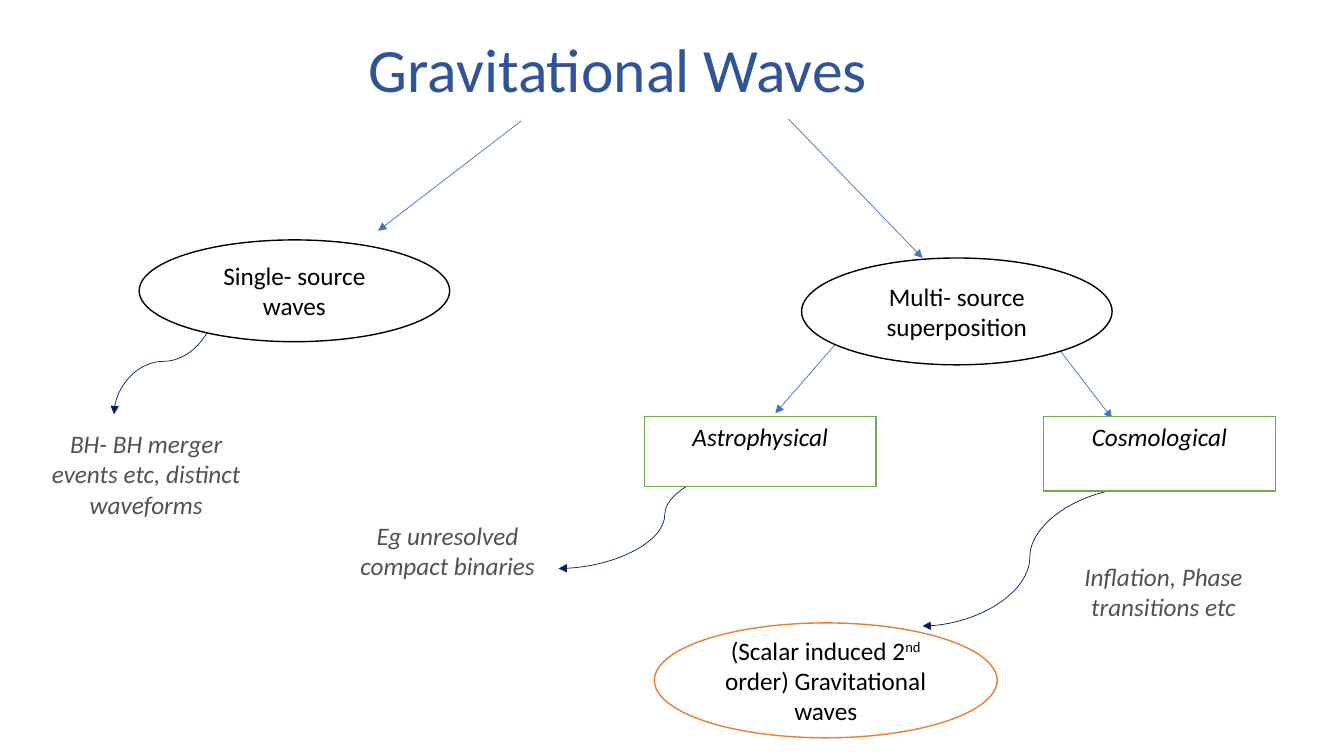
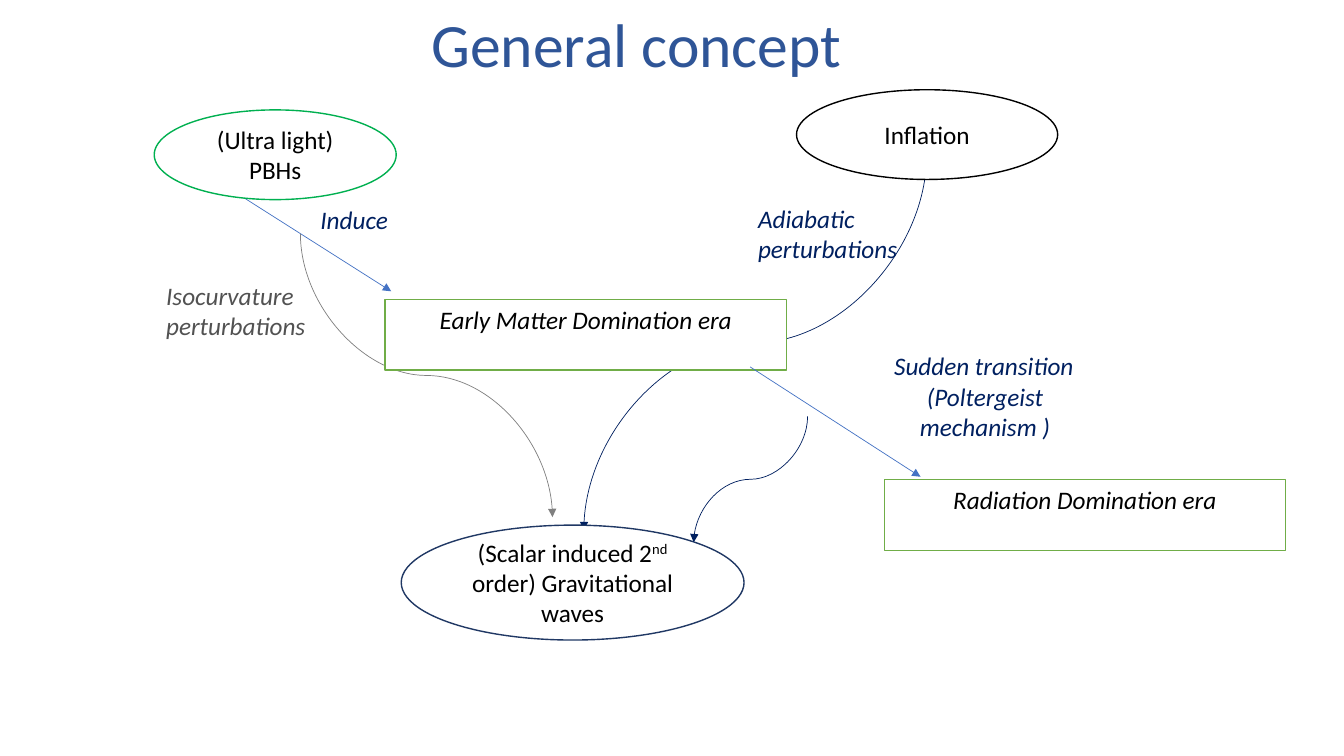
from dataclasses import dataclass

from lxml import etree
from pptx import Presentation
from pptx.dml.color import RGBColor
from pptx.enum.shapes import MSO_CONNECTOR, MSO_SHAPE
from pptx.enum.text import MSO_ANCHOR, MSO_AUTO_SIZE, PP_ALIGN
from pptx.oxml.ns import qn
from pptx.util import Pt

EMU_PER_PX = 9144  # 100 px to the inch
SLIDE_SIZE = (1333, 750)
TITLE_ONLY = 5
OVAL, RECT = MSO_SHAPE.OVAL, MSO_SHAPE.RECTANGLE
STRAIGHT, CURVE = MSO_CONNECTOR.STRAIGHT, MSO_CONNECTOR.CURVE
LEFT, CENTER = PP_ALIGN.LEFT, PP_ALIGN.CENTER
TOP, MIDDLE = MSO_ANCHOR.TOP, MSO_ANCHOR.MIDDLE


@dataclass(frozen=True)
class Theme:
    font: str = "Calibri"
    title_size: int = 44
    body_size: int = 18
    outline: float = 1
    link_width: float = 0.5
    title: str = "2F5597"
    black: str = "000000"
    white: str = "FFFFFF"
    gray: str = "525252"
    gray_link: str = "808080"
    navy: str = "002060"
    dark_blue: str = "203864"
    blue: str = "4472C4"
    green: str = "70AD47"
    bright_green: str = "00B050"
    orange: str = "ED7D31"


THEME = Theme()

# A text is a list of (text, is_superscript) spans.
INDUCED_WAVES = [("(Scalar induced 2", False), ("nd", True),
                 (" order) Gravitational waves", False)]

# links: (route, start, end, colour, bend); bend is the turning point in percent
# nodes: (shape, (left, top, width, height), line colour, text)
# labels: ((left, top, width, height), colour, [(text, alignment)])
SLIDES = [
    {
        "title": ("Gravitational Waves", (304, 26, 618, 84)),
        "links_behind": [
            ("line", (517, 120), (375, 229), THEME.blue, 50),
            ("line", (782, 118), (915, 256), THEME.blue, 50),
            ("line", (849, 318), (769, 410), THEME.blue, 50),
            ("line", (1050, 346), (1103, 415), THEME.blue, 50),
            ("down", (212, 306), (113, 411), THEME.navy, 50),
            ("across", (782, 457), (554, 564), THEME.navy, 53.8),
            ("across", (1128, 484), (915, 621), THEME.navy, 50),
        ],
        "nodes": [
            (OVAL, (138, 238, 308, 101), THEME.black, [("Single- source waves", False)]),
            (OVAL, (795, 256, 308, 106), THEME.black,
             [("Multi- source superposition", False)]),
            (RECT, (639, 413, 230, 70), THEME.green, [("Astrophysical", False)]),
            (RECT, (1035, 413, 230, 74), THEME.green, [("Cosmological", False)]),
            (OVAL, (649, 618, 340, 114), THEME.orange, INDUCED_WAVES),
        ],
        "labels": [
            ((38, 420, 214, 131), THEME.gray,
             [("BH- BH merger events etc, distinct waveforms", CENTER)]),
            ((337, 511, 214, 101), THEME.gray,
             [("Eg unresolved compact binaries", CENTER)]),
            ((1047, 552, 214, 101), THEME.gray,
             [("Inflation, Phase transitions etc", CENTER)]),
        ],
        "links_front": [],
    },
    {
        "title": ("General concept", (298, 1, 667, 84)),
        "links_behind": [
            ("line", (218, 181), (388, 289), THEME.blue, 50),
            ("down", (919, 154), (579, 526), THEME.navy, 50),
            ("down", (298, 232), (548, 513), THEME.gray_link, 50),
        ],
        "nodes": [
            (OVAL, (153, 109, 240, 89), THEME.bright_green, [("(Ultra light) PBHs", False)]),
            (OVAL, (790, 89, 259, 89), THEME.black, [("Inflation", False)]),
            (RECT, (382, 297, 398, 70), THEME.green, [("Early Matter Domination era", False)]),
            (RECT, (877, 476, 398, 70), THEME.green, [("Radiation Domination era", False)]),
            (OVAL, (398, 521, 340, 114), THEME.dark_blue, INDUCED_WAVES),
        ],
        "labels": [
            ((308, 198, 200, 71), THEME.navy, [("Induce", LEFT)]),
            ((742, 197, 200, 101), THEME.navy, [("Adiabatic perturbations", LEFT)]),
            ((155, 273, 200, 101), THEME.gray, [("Isocurvature perturbations", LEFT)]),
            ((877, 343, 200, 131), THEME.navy,
             [("Sudden transition", LEFT), ("(Poltergeist mechanism )", CENTER)]),
        ],
        "links_front": [
            ("line", (744, 364), (913, 473), THEME.blue, 50),
            ("down", (801, 413), (688, 538), THEME.navy, 50),
        ],
    },
]


def px(*lengths):
    return [round(length * EMU_PER_PX) for length in lengths]


def add_span(para, text, size, color, italic=False, superscript=False):
    span = para.add_run()
    span.text = text
    span.font.name = THEME.font
    span.font.size = Pt(size)
    span.font.italic = italic
    span.font.color.rgb = RGBColor.from_string(color)
    if superscript:
        span.font._element.set("baseline", "30000")


def add_title(page, text, frame):
    box = page.shapes.title
    box.left, box.top, box.width, box.height = px(*frame)
    box.text_frame.auto_size = MSO_AUTO_SIZE.NONE
    box.text_frame.vertical_anchor = TOP
    para = box.text_frame.paragraphs[0]
    para.alignment = CENTER
    add_span(para, text, THEME.title_size, THEME.title)


def add_link(page, route, start, end, color, bend):
    """Draw an arrow; a "down" curve is a sideways curve turned a quarter."""
    turn = 0
    if route == "down":
        turn = 90 if end[0] < start[0] else 270
        sign = 1 if turn == 90 else -1
        mid_x, mid_y = (start[0] + end[0]) / 2, (start[1] + end[1]) / 2
        start, end = [(mid_x + sign * (y - mid_y), mid_y - sign * (x - mid_x))
                      for x, y in (start, end)]
    kind = STRAIGHT if route == "line" else CURVE
    link = page.shapes.add_connector(kind, *px(*start, *end))
    link.line.color.rgb = RGBColor.from_string(color)
    link.line.width = Pt(THEME.link_width)
    properties = link._element.spPr
    if turn:
        properties.find(qn("a:xfrm")).set("rot", str(turn * 60000))
    if bend != 50:
        guides = properties.find(qn("a:prstGeom")).find(qn("a:avLst"))
        etree.SubElement(guides, qn("a:gd"), name="adj1", fmla=f"val {round(bend * 1000)}")
    etree.SubElement(link.line._get_or_add_ln(), qn("a:tailEnd"), type="triangle")
    etree.SubElement(properties, qn("a:effectLst"))


def add_node(page, shape, frame, color, spans):
    node = page.shapes.add_shape(shape, *px(*frame))
    node.shadow.inherit = False
    node.fill.solid()
    node.fill.fore_color.rgb = RGBColor.from_string(THEME.white)
    node.line.color.rgb = RGBColor.from_string(color)
    node.line.width = Pt(THEME.outline)
    node.text_frame.word_wrap = True
    node.text_frame.vertical_anchor = MIDDLE if shape == OVAL else TOP
    para = node.text_frame.paragraphs[0]
    para.alignment = CENTER
    for text, superscript in spans:
        add_span(para, text, THEME.body_size, THEME.black, shape == RECT, superscript)


def add_label(page, frame, color, lines):
    box = page.shapes.add_textbox(*px(*frame))
    box.text_frame.word_wrap = True
    for index, (text, alignment) in enumerate(lines):
        para = box.text_frame.add_paragraph() if index else box.text_frame.paragraphs[0]
        para.alignment = alignment
        add_span(para, text, THEME.body_size, color, italic=True)


def main():
    deck = Presentation()
    deck.slide_width, deck.slide_height = px(*SLIDE_SIZE)
    for content in SLIDES:
        page = deck.slides.add_slide(deck.slide_layouts[TITLE_ONLY])
        add_title(page, *content["title"])
        for key, draw in (("links_behind", add_link), ("nodes", add_node),
                          ("labels", add_label), ("links_front", add_link)):
            for item in content[key]:
                draw(page, *item)
    deck.save("out.pptx")


if __name__ == "__main__":
    main()
